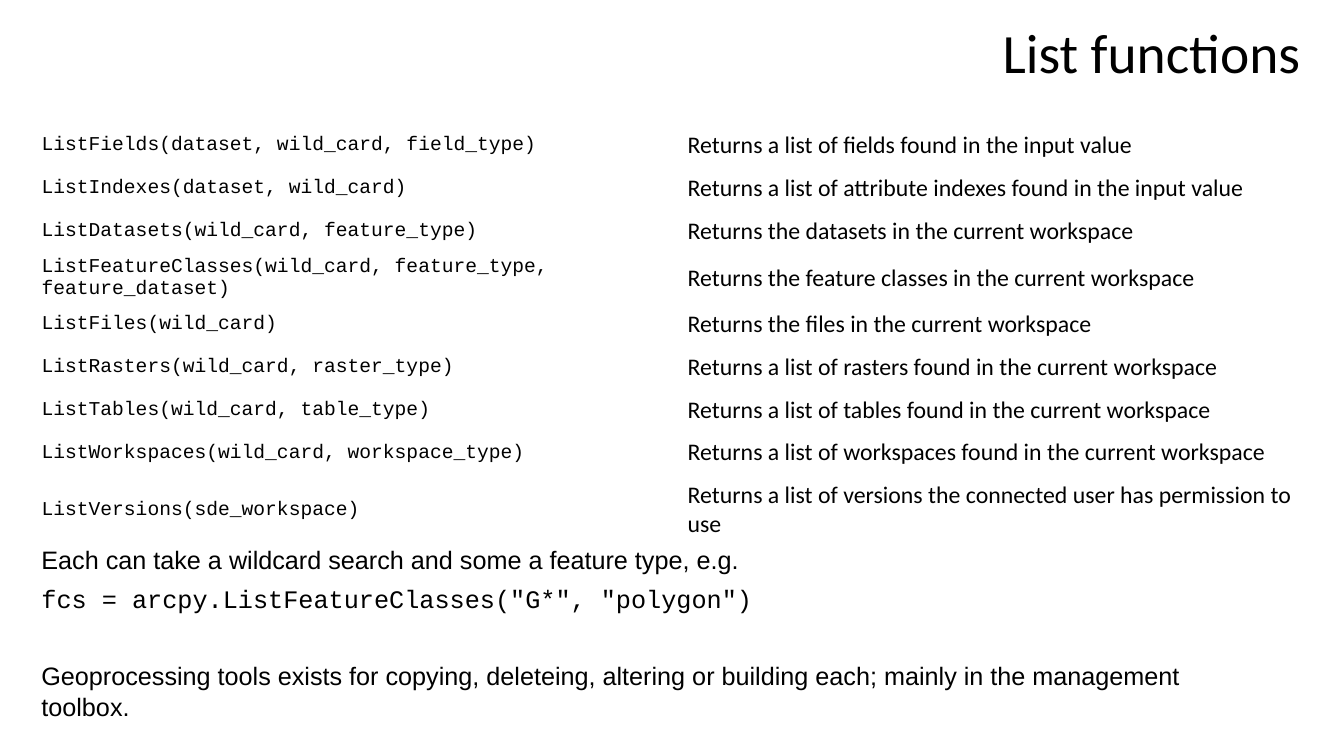
import pptx
import pptx.dml.color
import pptx.enum.text
import pptx.util

Pt = pptx.util.Pt
ALIGN = pptx.enum.text.PP_ALIGN
ANCHOR = pptx.enum.text.MSO_ANCHOR
AUTO_SIZE = pptx.enum.text.MSO_AUTO_SIZE

TITLE = "List functions"
FUNCTIONS = [
    ("ListFields(dataset, wild_card, field_type)", "Returns a list of fields found in the input value"),
    ("ListIndexes(dataset, wild_card)", "Returns a list of attribute indexes found in the input value"),
    ("ListDatasets(wild_card, feature_type)", "Returns the datasets in the current workspace"),
    ("ListFeatureClasses(wild_card, feature_type, feature_dataset)",
     "Returns the feature classes in the current workspace"),
    ("ListFiles(wild_card)", "Returns the files in the current workspace"),
    ("ListRasters(wild_card, raster_type)", "Returns a list of rasters found in the current workspace"),
    ("ListTables(wild_card, table_type)", "Returns a list of tables found in the current workspace"),
    ("ListWorkspaces(wild_card, workspace_type)", "Returns a list of workspaces found in the current workspace"),
    ("ListVersions(sde_workspace)", "Returns a list of versions the connected user has permission to use"),
]
NOTES = [
    ("Each can take a wildcard search and some a feature type, e.g.", "Arial", 6.5),
    ('fcs = arcpy.ListFeatureClasses("G*", "polygon")', "Courier New", 6.5),
    ("Geoprocessing tools exists for copying, deleteing, altering or building each; "
     "mainly in the management toolbox.", "Arial", 33.5),
]

COLORS = {"text": "000000"}
TITLE_FONT = {"name": "Calibri", "size": Pt(39.6)}
COLUMN_FONTS = [
    {"name": "Courier New", "size": Pt(14)},
    {"name": "Calibri", "size": Pt(17)},
]
TITLE_BOX = {"left": Pt(108), "top": Pt(13.5), "width": Pt(828), "height": Pt(52.5)}
NOTES_BOX = (Pt(22.5), Pt(384), Pt(880), Pt(136))
TABLE_LEFT, TABLE_TOP, COLUMN_WIDTH = 22.5, 90, 461.5
ROW_HEIGHTS = [26, 33] * 4 + [46]


def apply(target, values):
    for name, value in values.items():
        setattr(target, name, value)


def write(paragraph, text, font):
    run = paragraph.add_run()
    run.text = text
    apply(run.font, font)
    run.font.color.rgb = pptx.dml.color.RGBColor.from_string(COLORS["text"])


def add_title(slide):
    title = slide.shapes.title
    apply(title, TITLE_BOX)
    apply(title.text_frame, {"vertical_anchor": ANCHOR.MIDDLE, "auto_size": AUTO_SIZE.NONE})
    paragraph = title.text_frame.paragraphs[0]
    apply(paragraph, {"alignment": ALIGN.RIGHT, "line_spacing": 0.9})
    write(paragraph, TITLE, TITLE_FONT)


def add_function_table(slide):
    columns = len(COLUMN_FONTS)
    table = slide.shapes.add_table(
        len(FUNCTIONS), columns, Pt(TABLE_LEFT), Pt(TABLE_TOP),
        Pt(COLUMN_WIDTH * columns), Pt(sum(ROW_HEIGHTS))).table
    apply(table, {"first_row": False, "horz_banding": False})
    for column in table.columns:
        column.width = Pt(COLUMN_WIDTH)
    for row, height, texts in zip(table.rows, ROW_HEIGHTS, FUNCTIONS):
        row.height = Pt(height)
        for cell, text, font in zip(row.cells, texts, COLUMN_FONTS):
            cell.fill.background()
            cell.vertical_anchor = ANCHOR.MIDDLE
            write(cell.text_frame.paragraphs[0], text, font)


def add_notes(slide):
    frame = slide.shapes.add_textbox(*NOTES_BOX).text_frame
    apply(frame, {"word_wrap": True, "vertical_anchor": ANCHOR.MIDDLE,
                  "auto_size": AUTO_SIZE.SHAPE_TO_FIT_TEXT})
    for index, (text, font_name, space) in enumerate(NOTES):
        paragraph = frame.add_paragraph() if index else frame.paragraphs[0]
        paragraph.space_before = Pt(space)
        write(paragraph, text, {"name": font_name, "size": Pt(18)})


def main():
    presentation = pptx.Presentation()
    apply(presentation, {"slide_width": Pt(960), "slide_height": Pt(540)})
    slide = presentation.slides.add_slide(presentation.slide_layouts.get_by_name("Title Only"))
    add_title(slide)
    add_function_table(slide)
    add_notes(slide)
    presentation.save("out.pptx")


if __name__ == "__main__":
    main()
